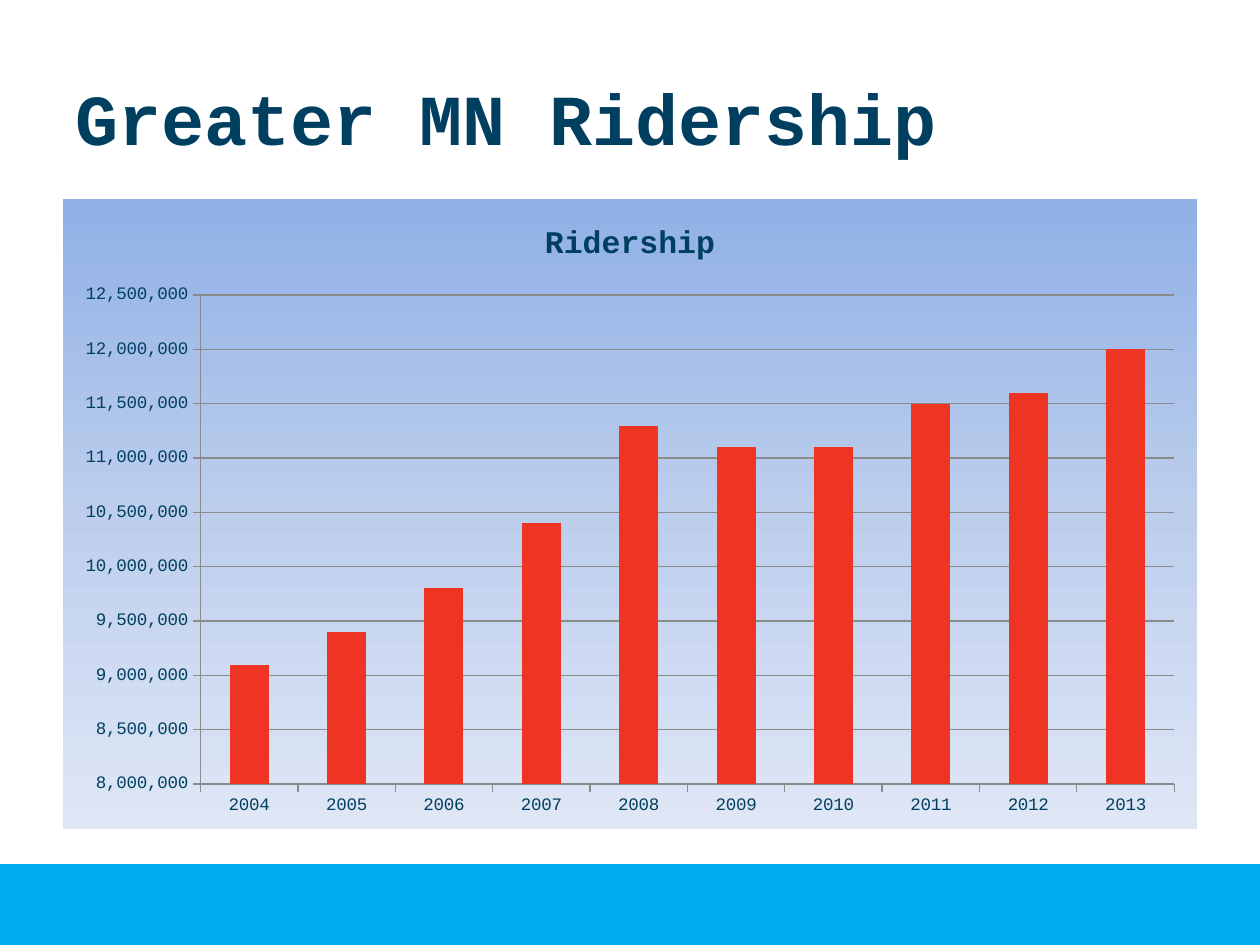
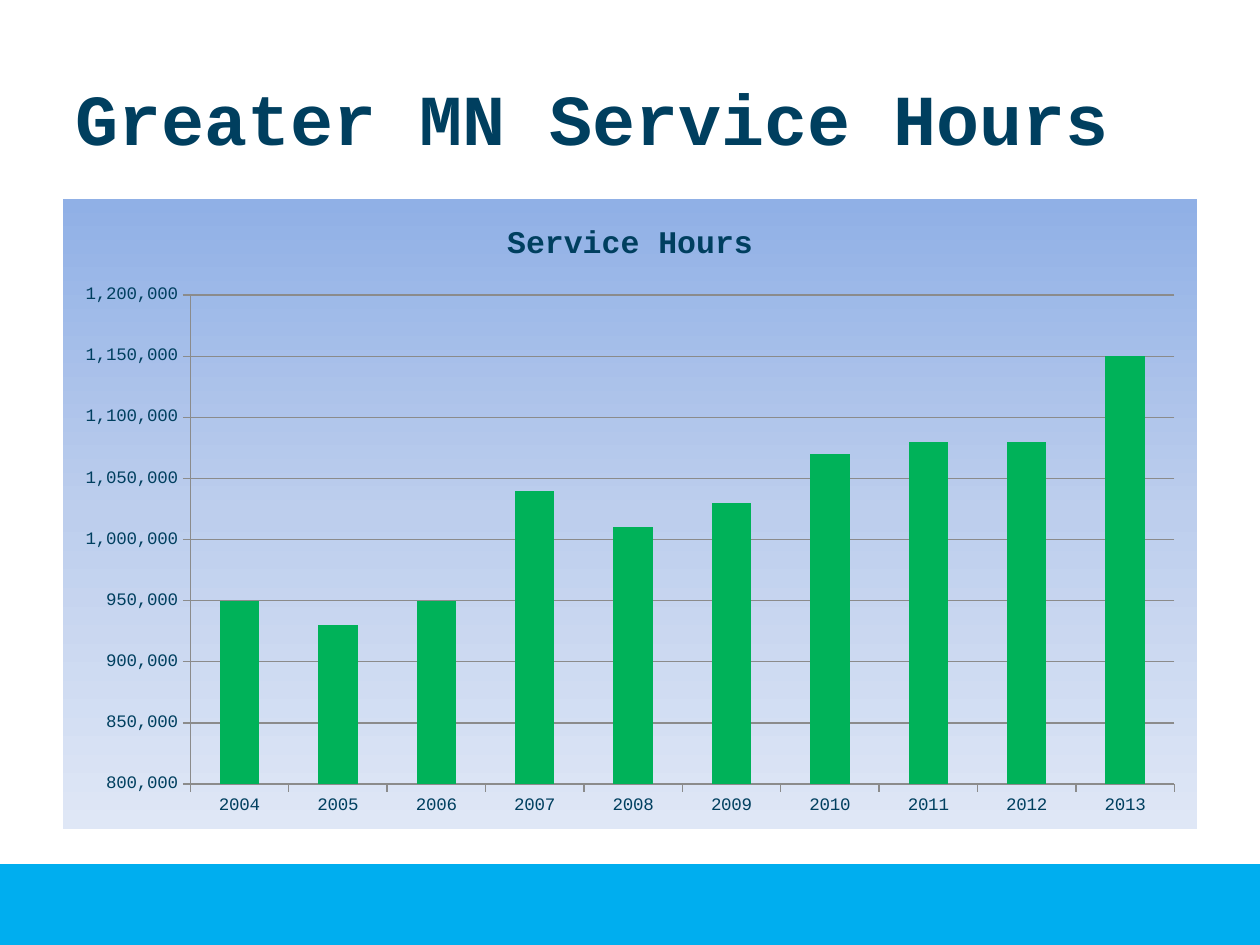
from lxml import etree
from pptx import Presentation
from pptx import util as u
from pptx.chart.data import CategoryChartData
from pptx.dml.color import RGBColor
from pptx.enum import chart as charts, shapes, text
from pptx.oxml import ns

PAGES = [
    {
        "title": "Greater MN Ridership",
        "series": "Ridership",
        "values": [9100000, 9400000, 9800000, 10400000, 11300000,
                   11100000, 11100000, 11500000, 11600000, 12000000],
        "scale": {"minimum_scale": 8000000, "maximum_scale": 12500000, "major_unit": 500000},
        "color": "red",
    },
    {
        "title": "Greater MN Service Hours",
        "series": "Service Hours",
        "values": [950000, 930000, 950000, 1040000, 1010000,
                   1030000, 1070000, 1080000, 1080000, 1150000],
        "scale": {"minimum_scale": 800000, "maximum_scale": 1200000, "major_unit": 50000},
        "color": "green",
    },
]
YEARS = [str(year) for year in range(2004, 2014)]

COLORS = {"navy": "003F5F", "band": "00AEEF", "red": "EE3524", "green": "00B259",
          "grid": "8B8B8B", "sky": "90B0E6", "haze": "BDCEED", "mist": "DFE7F6"}
GRADIENT = [(0, "sky"), (50, "haze"), (100, "mist")]

WIDTH, HEIGHT, MARGIN = 25.4, 19.05, 1.27
BAND_HEIGHT = 1.63
INNER = WIDTH - 2 * MARGIN
TITLE_AREA = (MARGIN, 0.76, INNER, 3.18)
CHART_AREA = (MARGIN, 4.01, INNER, 12.7)
BAND_AREA = (0, HEIGHT - BAND_HEIGHT, WIDTH, BAND_HEIGHT)

FONT = {"name": "Courier New"}
TITLE_FONT = {**FONT, "size": u.Pt(41), "bold": True}
CHART_TITLE_FONT = {**FONT, "size": u.Pt(18), "bold": True}
AXIS_FONT = {**FONT, "size": u.Pt(10), "bold": False}


def rgb(name):
    return RGBColor.from_string(COLORS[name])


def assign(target, values):
    for name, value in values.items():
        setattr(target, name, value)


def style_font(font, values):
    assign(font, values)
    font.color.rgb = rgb("navy")


def lengths(area):
    return [u.Cm(value) for value in area]


def style_line(line):
    line.color.rgb = rgb("grid")
    line.width = u.Pt(0.75)


def add_title(page, words):
    title = page.shapes.title
    assign(title, dict(zip(("left", "top", "width", "height"), lengths(TITLE_AREA))))
    frame = title.text_frame
    frame.text = words
    frame.vertical_anchor = text.MSO_ANCHOR.MIDDLE
    para = frame.paragraphs[0]
    para.alignment = text.PP_ALIGN.LEFT
    style_font(para.runs[0].font, TITLE_FONT)


def add_band(page):
    band = page.shapes.add_shape(shapes.MSO_SHAPE.RECTANGLE, *lengths(BAND_AREA))
    band.shadow.inherit = False
    band.fill.solid()
    band.fill.fore_color.rgb = rgb("band")
    band.line.fill.background()


def fill_chart_area(chart):
    space = chart.element
    properties = etree.Element(ns.qn("c:spPr"))
    gradient = etree.SubElement(properties, ns.qn("a:gradFill"))
    stops = etree.SubElement(gradient, ns.qn("a:gsLst"))
    for percent, name in GRADIENT:
        stop = etree.SubElement(stops, ns.qn("a:gs"), pos=str(percent * 1000))
        etree.SubElement(stop, ns.qn("a:srgbClr"), val=COLORS[name])
    etree.SubElement(gradient, ns.qn("a:lin"), ang=str(90 * 60000), scaled="0")
    line = etree.SubElement(properties, ns.qn("a:ln"))
    etree.SubElement(line, ns.qn("a:noFill"))
    space.find(ns.qn("c:chart")).addnext(properties)


def add_column_chart(page, content):
    data = CategoryChartData(number_format="#,##0")
    data.categories = YEARS
    data.add_series(content["series"], content["values"])
    chart = page.shapes.add_chart(charts.XL_CHART_TYPE.COLUMN_CLUSTERED,
                                  *lengths(CHART_AREA), data).chart
    style_font(chart.font, AXIS_FONT)
    fill_chart_area(chart)
    chart.has_legend = False
    chart.has_title = True
    heading = chart.chart_title.text_frame
    heading.text = content["series"]
    style_font(heading.paragraphs[0].runs[0].font, CHART_TITLE_FONT)

    for axis in (chart.category_axis, chart.value_axis):
        axis.major_tick_mark = charts.XL_TICK_MARK.OUTSIDE
        axis.minor_tick_mark = charts.XL_TICK_MARK.NONE
        style_line(axis.format.line)
    values = chart.value_axis
    assign(values, content["scale"])
    values.has_major_gridlines = True
    style_line(values.major_gridlines.format.line)
    assign(values.tick_labels, {"number_format": "#,##0", "number_format_is_linked": False})

    plot = chart.plots[0]
    assign(plot, {"gap_width": 150, "vary_by_categories": False})
    columns = plot.series[0].format
    columns.fill.solid()
    columns.fill.fore_color.rgb = rgb(content["color"])


def main():
    deck = Presentation()
    deck.slide_width, deck.slide_height = u.Cm(WIDTH), u.Cm(HEIGHT)
    for content in PAGES:
        page = deck.slides.add_slide(deck.slide_layouts[5])
        add_band(page)
        add_title(page, content["title"])
        add_column_chart(page, content)
    deck.save("out.pptx")


if __name__ == "__main__":
    main()
